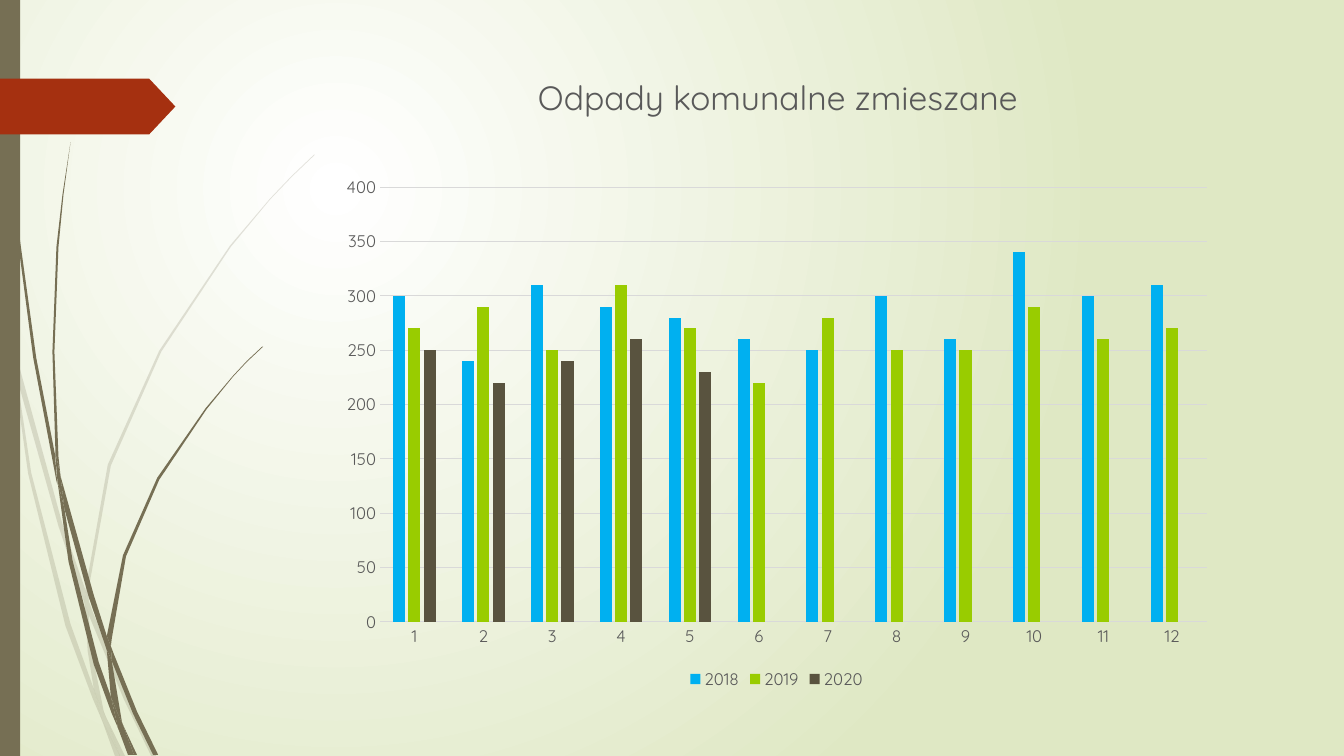
from lxml.etree import SubElement
from pptx import Presentation
from pptx.chart.data import CategoryChartData
from pptx.dml.color import RGBColor
from pptx.enum.chart import XL_CHART_TYPE as ChartType, XL_LEGEND_POSITION as LegendPosition
from pptx.enum.chart import XL_TICK_MARK as TickMark
from pptx.enum.shapes import MSO_SHAPE as Preset
from pptx.enum.text import MSO_ANCHOR as Anchor, PP_ALIGN as Align
from pptx.oxml.ns import qn
from pptx.util import Pt

FONT = "Quicksand"
WHITE = RGBColor(0xFF, 0xFF, 0xFF)
PALE_GREEN = RGBColor(0xDF, 0xE8, 0xC4)
OLIVE = RGBColor(0x76, 0x6F, 0x54)
RED = RGBColor(0xA5, 0x30, 0x10)
GREY = RGBColor(0x59, 0x59, 0x59)
GRID = RGBColor(0xD9, 0xD9, 0xD9)

YEARS = {
    "2018": (RGBColor(0x00, 0xB0, 0xF0),
             [300, 240, 310, 290, 280, 260, 250, 300, 260, 340, 300, 310]),
    "2019": (RGBColor(0x99, 0xCC, 0x00),
             [270, 290, 250, 310, 270, 220, 280, 250, 250, 290, 260, 270]),
    "2020": (RGBColor(0x59, 0x53, 0x3F), [250, 220, 240, 260, 230] + [None] * 7),
}

BLADE_UNIT = Pt(0.72)
PALE_BLADES = [
    [(11, 350), (9, 322), (0, 282), (0, 299), (10, 344)],
    [(58, 522), (84, 599), (85, 586), (62, 520), (14, 345), (17, 376)],
    [(92, 607), (88, 596), (88, 610), (123, 694), (150, 750), (155, 750), (127, 692)],
    [(119, 750), (124, 750), (105, 711)],
    [(93, 683), (70, 619), (31, 469), (17, 376), (11, 350), (28, 470), (65, 621),
     (92, 693), (101, 714), (99, 707)],
    [(84, 599), (87, 646), (93, 683), (96, 692), (105, 711), (103, 706), (91, 646),
     (88, 610), (88, 608)],
    [(88, 584), (110, 462), (160, 349), (229, 245), (268, 198), (290, 175), (312, 154),
     (312, 153), (289, 175), (268, 197), (228, 244), (158, 348), (107, 461), (85, 584),
     (85, 586), (88, 596)],
    [(101, 714), (114, 750), (119, 750)],
    [(88, 608), (88, 610), (88, 596), (85, 586), (84, 599)],
    [(96, 692), (93, 683), (99, 707), (101, 714), (119, 750), (105, 711)],
]
DARK_BLADES = [
    [(7, 110), (17, 233), (33, 355), (56, 477), (57, 481), (55, 457), (55, 453),
     (36, 355), (19, 232), (8, 109), (5, 48), (4, 0), (3, 0), (4, 48)],
    [(88, 592), (106, 645), (106, 633), (106, 631), (93, 590), (60, 472), (64, 505)],
    [(113, 649), (110, 641), (111, 656), (132, 708), (152, 749), (157, 749), (136, 706)],
    [(110, 691), (98, 657), (72, 556), (64, 505), (57, 477), (68, 557), (93, 659),
     (111, 708), (117, 722), (116, 717)],
    [(60, 472), (58, 453), (54, 349), (58, 245), (63, 193), (70, 141), (62, 193),
     (56, 245), (52, 349), (55, 449)],
    [(133, 749), (136, 749), (122, 719)],
    [(57, 477), (64, 505), (60, 472), (55, 449), (55, 453)],
    [(111, 633), (125, 552), (158, 476), (205, 406), (231, 374), (245, 359), (261, 344),
     (260, 344), (245, 358), (231, 373), (204, 405), (156, 474), (122, 551), (106, 631),
     (110, 641)],
    [(117, 722), (127, 749), (131, 749)],
    [(106, 645), (110, 691), (116, 706), (122, 719), (121, 716), (111, 656), (109, 651)],
    [(106, 645), (109, 651), (111, 656), (110, 641), (106, 631), (106, 633)],
    [(116, 706), (110, 691), (116, 717), (117, 722), (130, 749), (133, 749), (122, 719)],
]


def paint(shape, color, opacity=100):
    shape.shadow.inherit = False
    shape.fill.solid()
    shape.fill.fore_color.rgb = color
    shape.line.fill.background()
    if opacity < 100:
        rgb = shape.fill._xPr.find(".//" + qn("a:srgbClr"))
        SubElement(rgb, qn("a:alpha"), val=str(opacity * 1000))


def set_font(font, size, color=GREY):
    font.name = FONT
    font.size = Pt(size)
    font.color.rgb = color


def add_text(page, text, box, size=12, color=GREY, align=Align.LEFT, anchor=Anchor.TOP):
    frame = page.shapes.add_textbox(*map(Pt, box)).text_frame
    frame.word_wrap = True
    frame.vertical_anchor = anchor
    para = frame.paragraphs[0]
    para.alignment = align
    span = para.add_run()
    span.text = text
    set_font(span.font, size, color)


def fill_background(page):
    fill = page.background.fill
    fill.gradient()
    for stop, color, position in zip(fill.gradient_stops, (WHITE, PALE_GREEN), (0, 1)):
        stop.color.rgb = color
        stop.position = position
    gradient = page.element.find(".//" + qn("a:gradFill"))
    gradient.remove(gradient.find(qn("a:lin")))
    circle = SubElement(gradient, qn("a:path"), path="circle")
    SubElement(circle, qn("a:fillToRect"), l="50000", t="50000", r="100000", b="100000")


def add_blades(page, blades, left, top, opacity=100):
    group = page.shapes.add_group_shape()
    for start, *others in blades:
        builder = group.shapes.build_freeform(*start, scale=BLADE_UNIT)
        builder.add_line_segments(others, close=True)
        paint(builder.convert_to_shape(Pt(left), Pt(top)), OLIVE, opacity)


def add_side_decoration(page, left, top, height):
    add_blades(page, PALE_BLADES, left, top, opacity=20)
    add_blades(page, DARK_BLADES, left, top)
    bar = page.shapes.add_shape(Preset.RECTANGLE, Pt(left), Pt(top), Pt(14.4), Pt(height))
    paint(bar, OLIVE)
    arrow = page.shapes.add_shape(Preset.PENTAGON, Pt(left), Pt(top + 56.2), Pt(125.3), Pt(39.8))
    arrow.adjustments[0] = 0.47
    paint(arrow, RED)


def add_waste_chart(page, box):
    data = CategoryChartData()
    data.categories = [str(month) for month in range(1, 13)]
    for year, (color, amounts) in YEARS.items():
        data.add_series(year, amounts)
    chart = page.shapes.add_chart(ChartType.COLUMN_CLUSTERED, *map(Pt, box), data).chart
    set_font(chart.font, 12)
    chart.has_title = False
    chart.has_legend = True
    chart.legend.position = LegendPosition.BOTTOM
    chart.legend.include_in_layout = False
    set_font(chart.legend.font, 12)

    plot = chart.plots[0]
    plot.gap_width = 219
    plot.overlap = -27
    plot.vary_by_categories = False
    for series, (color, amounts) in zip(plot.series, YEARS.values()):
        series.format.fill.solid()
        series.format.fill.fore_color.rgb = color
        series.invert_if_negative = False

    months, amounts_axis = chart.category_axis, chart.value_axis
    for axis in (months, amounts_axis):
        axis.major_tick_mark = axis.minor_tick_mark = TickMark.NONE
        set_font(axis.tick_labels.font, 12)
    amounts_axis.minimum_scale = 0
    amounts_axis.maximum_scale = 400
    amounts_axis.major_unit = 50
    amounts_axis.format.line.fill.background()
    for line in (months.format.line, amounts_axis.major_gridlines.format.line):
        line.color.rgb = GRID
        line.width = Pt(0.75)


def main():
    deck = Presentation()
    deck.slide_width, deck.slide_height = Pt(960), Pt(540)
    page = deck.slides.add_slide(deck.slide_layouts[6])
    fill_background(page)
    add_side_decoration(page, 0, 0, 540)
    add_text(page, "Odpady komunalne zmieszane", (204.5, 49, 702, 41), size=24,
             align=Align.CENTER, anchor=Anchor.MIDDLE)
    add_waste_chart(page, (234.7, 118.8, 640, 376.6))
    deck.save("out.pptx")


if __name__ == "__main__":
    main()
